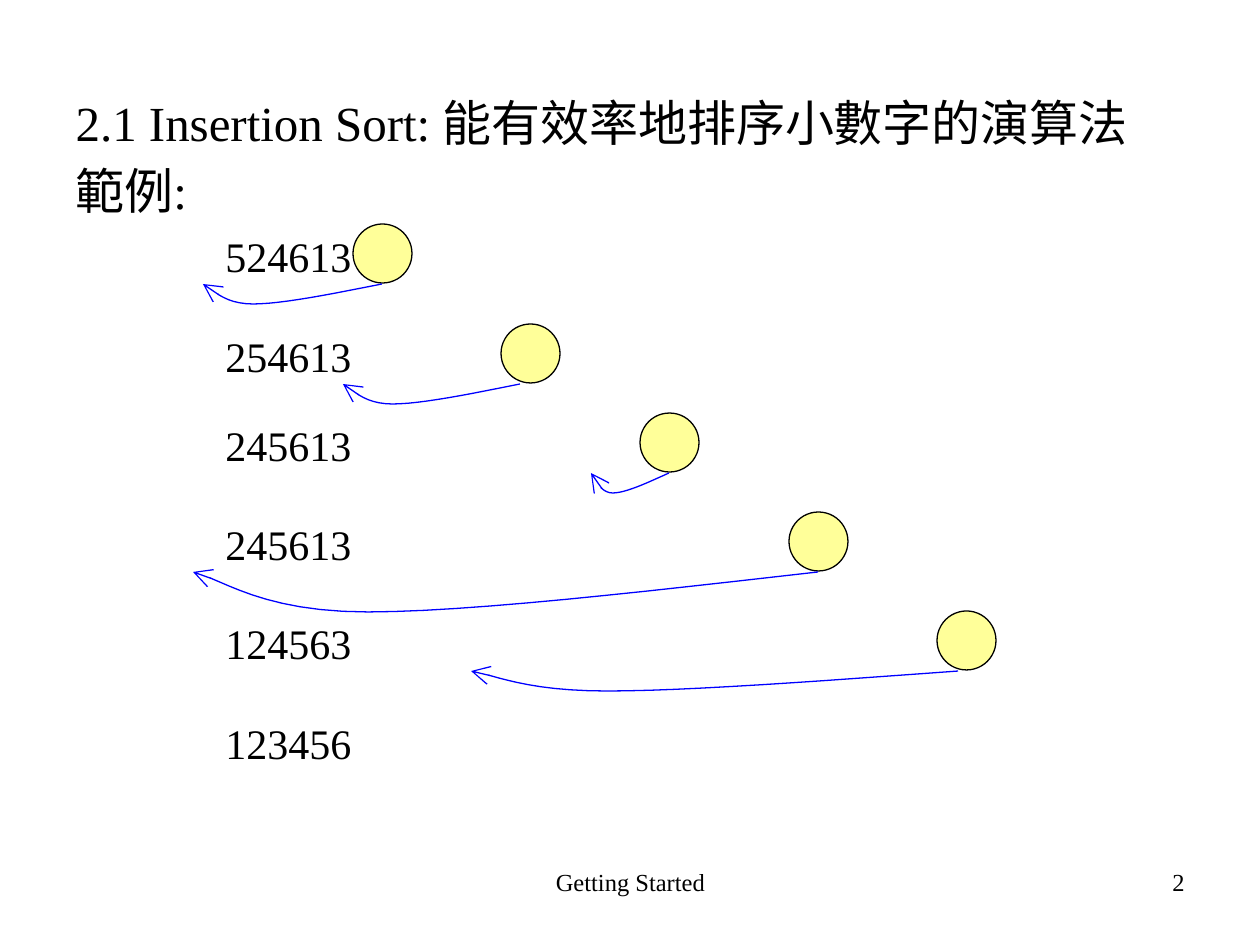
from lxml.etree import SubElement
from pptx import Presentation
from pptx.dml.color import RGBColor
from pptx.enum.shapes import MSO_SHAPE
from pptx.enum.text import MSO_ANCHOR, MSO_AUTO_SIZE, PP_ALIGN
from pptx.oxml.ns import qn
from pptx.util import Pt

SCALE = 914400 / 126


def lengths(*pixels):
    return [round(pixel * SCALE) for pixel in pixels]


def add_text(para, text, size, color="000000"):
    span = para.add_run()
    span.text = text
    span.font.name = "Times New Roman"
    span.font.size = Pt(size)
    span.font.color.rgb = RGBColor.from_string(color)


deck = Presentation()
deck.slide_width, deck.slide_height = lengths(1260, 945)
page = deck.slides.add_slide(deck.slide_layouts[1])
title = page.shapes.title.element
title.getparent().remove(title)

body = page.placeholders[1]
body.left, body.top, body.width, body.height = lengths(63, 86, 1143, 169)
frame = body.text_frame
frame.auto_size = MSO_AUTO_SIZE.NONE
frame.vertical_anchor = MSO_ANCHOR.TOP
for index, text in enumerate(["2.1 Insertion Sort: 能有效率地排序小數字的演算法", "範例:"]):
    para = frame.add_paragraph() if index else frame.paragraphs[0]
    indent = lengths(66)[0]
    properties = para._p.get_or_add_pPr()
    properties.set("marL", str(indent))
    properties.set("indent", str(-indent))
    SubElement(properties, qn("a:buNone"))
    add_text(para, text, 28)

row_tops = [224, 324, 413, 512, 611, 711]
sequences = ["524613", "254613", "245613", "245613", "124563", "123456"]
circle_lefts = [353, 501, 640, 789, 937]
arrows = [(382, 203, 20), (520, 343, 20), (669, 591, 20), (818, 193, 40), (958, 471, 20)]

for left, top in zip(circle_lefts, row_tops):
    circle = page.shapes.add_shape(MSO_SHAPE.OVAL, *lengths(left, top, 59, 59))
    circle.shadow.inherit = False
    circle.fill.solid()
    circle.fill.fore_color.rgb = RGBColor.from_string("FFFF99")
    circle.line.color.rgb = RGBColor.from_string("000000")
    circle.line.width = Pt(0.75)

labels = [(213, top, 774, 63, PP_ALIGN.JUSTIFY, text, 24) for top, text in zip(row_tops, sequences)]
labels += [
    (431, 861, 399, 66, PP_ALIGN.CENTER, "Getting Started", 14),
    (903, 861, 294, 66, PP_ALIGN.RIGHT, "2", 14),
]
for left, top, width, height, alignment, text, size in labels:
    box = page.shapes.add_textbox(*lengths(left, top, width, height))
    box.text_frame.word_wrap = True
    para = box.text_frame.paragraphs[0]
    para.alignment = alignment
    add_text(para, text, size)

curves = [
    [(1, 0), (0.72, 0.5), (0.44, 1), (0.28, 1)],
    [(0.28, 1), (0.11, 1), (0.05, 0.2), (0, 0)],
]
steps = 12
for (start, end, depth), row_top in zip(arrows, row_tops):
    top = row_top + 60
    points = []
    for curve in curves:
        for step in range(1, steps + 1):
            t = step / steps
            weights = [(1 - t) ** 3, 3 * t * (1 - t) ** 2, 3 * t**2 * (1 - t), t**3]
            across = sum(weight * x for weight, (x, y) in zip(weights, curve))
            down = sum(weight * y for weight, (x, y) in zip(weights, curve))
            points.append(lengths(end + across * (start - end), top + down * depth))
    builder = page.shapes.build_freeform(*lengths(start, top))
    builder.add_line_segments(points, close=False)
    arrow = builder.convert_to_shape()
    arrow.shadow.inherit = False
    arrow.fill.background()
    arrow.line.color.rgb = RGBColor.from_string("0000FF")
    arrow.line.width = Pt(0.75)
    SubElement(arrow.line._get_or_add_ln(), qn("a:tailEnd"), type="arrow", w="lg", len="lg")

deck.save("out.pptx")
